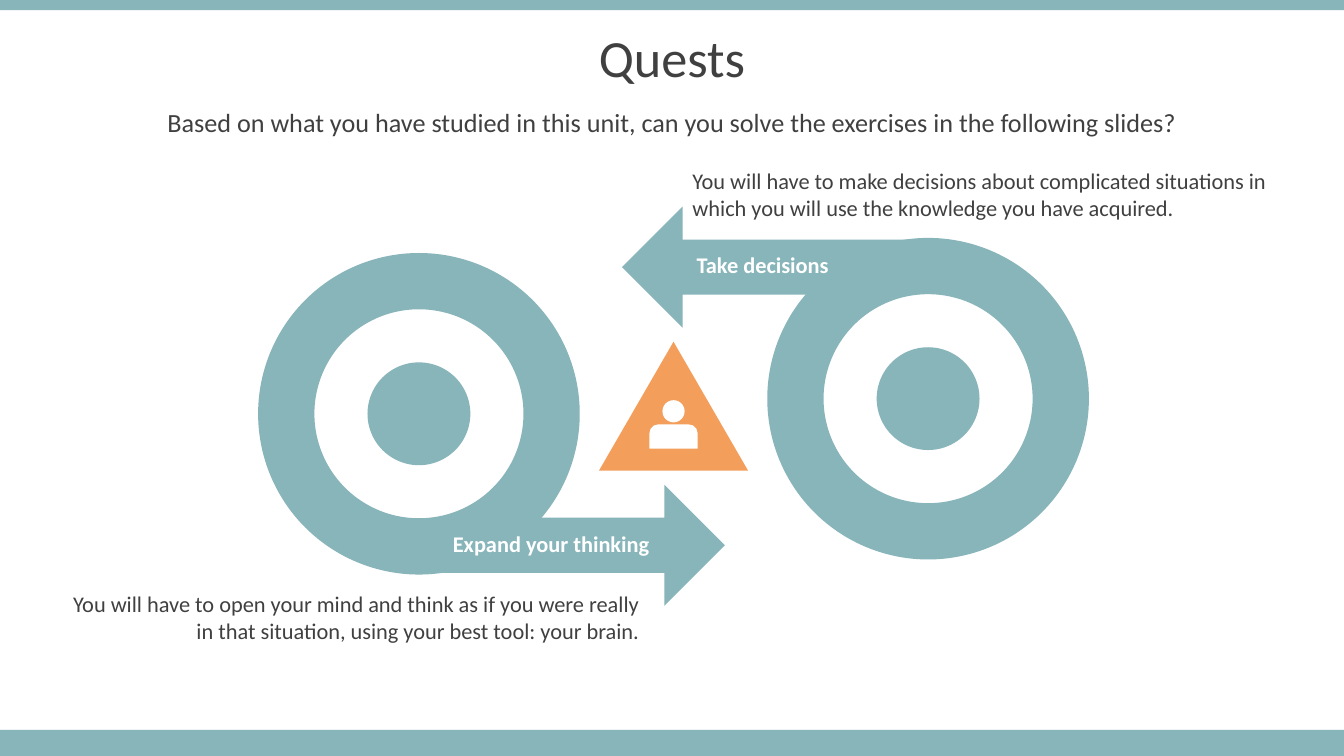
from pptx import Presentation
from pptx.dml.color import RGBColor
from pptx.enum.shapes import MSO_SHAPE as Shape
from pptx.enum.text import MSO_ANCHOR as Anchor, PP_ALIGN as Align
from pptx.util import Inches, Pt

COLORS = {"teal": "87B5BA", "orange": "F39E5A", "white": "FFFFFF", "text": "404040"}
FONT = "Calibri"
SLIDE_W, SLIDE_H = 13.33, 7.5

BARS = [(7.24, 0.26), (0, 0.1)]  # top, height

# Each target: left and top of its ring, rotation of ring and arrow
TARGETS = [(2.56, 2.51, 0), (7.61, 2.36, 180)]
RING, DOT = 3.19, 1.02
ARROW_W, ARROW_H = 2.89, 1.2
ARROW_DX, ARROW_DY = 1.74, 2.3

TRIANGLE = (5.94, 3.39, 1.48, 1.28)
HEAD, BODY_W, BODY_H, BODY_TOP = 0.22, 0.48, 0.24, 4.21
HEAD_TOP = 3.97

HEADING = {"align": Align.CENTER, "anchor": Anchor.MIDDLE,
           "paragraph": {"line_spacing": 0.9, "space_before": Pt(10)}}
LABEL = {"color": "white", "bold": True}
TEXTS = [
    ("Quests", (0, 0.18, SLIDE_W, 0.84), {**HEADING, "size": 37.3}),
    ("Based on what you have studied in this unit, can you solve the exercises "
     "in the following slides?", (0, 1.02, SLIDE_W, 0.42), {**HEADING, "size": 18.7}),
    ("You will have to make decisions about complicated situations in which you "
     "will use the knowledge you have acquired.", (6.77, 1.61, 6.3, 0.64), {}),
    ("You will have to open your mind and think as if you were really in that "
     "situation, using your best tool: your brain.", (0.56, 5.81, 5.88, 0.64),
     {"align": Align.RIGHT}),
    ("Expand your thinking", (3.13, 5.21, 3.41, 0.37), {**LABEL, "align": Align.RIGHT}),
    ("Take decisions", (6.81, 2.44, 3.41, 0.37), LABEL),
]


def add_figure(slide, kind, box, color, adjustments=(), rotation=0):
    figure = slide.shapes.add_shape(kind, *map(Inches, box))
    figure.shadow.inherit = False
    figure.fill.solid()
    figure.fill.fore_color.rgb = RGBColor.from_string(COLORS[color])
    figure.line.fill.background()
    figure.rotation = rotation
    for index, value in enumerate(adjustments):
        figure.adjustments[index] = value


def add_target(slide, left, top, rotation):
    """Ring, arrow and dot; a half turn moves the arrow to the opposite corner."""
    arrow_x, arrow_y = ARROW_DX, ARROW_DY
    if rotation:
        arrow_x = RING - ARROW_DX - ARROW_W
        arrow_y = RING - ARROW_DY - ARROW_H
    inset = (RING - DOT) / 2
    add_figure(slide, Shape.DONUT, (left, top, RING, RING), "teal", [0.175], rotation)
    add_figure(slide, Shape.RIGHT_ARROW, (left + arrow_x, top + arrow_y, ARROW_W, ARROW_H),
               "teal", [0.455, 0.5], rotation)
    add_figure(slide, Shape.OVAL, (left + inset, top + inset, DOT, DOT), "teal")


def add_person_sign(slide):
    left, _, width, _ = TRIANGLE
    center = left + width / 2
    add_figure(slide, Shape.ISOSCELES_TRIANGLE, TRIANGLE, "orange")
    add_figure(slide, Shape.ROUND_2_SAME_RECTANGLE,
               (center - BODY_W / 2, BODY_TOP, BODY_W, BODY_H), "white", [0.38, 0])
    add_figure(slide, Shape.OVAL, (center - HEAD / 2, HEAD_TOP, HEAD, HEAD), "white")


def add_text(slide, text, box, style):
    frame = slide.shapes.add_textbox(*map(Inches, box)).text_frame
    frame.word_wrap = True
    frame.vertical_anchor = style.get("anchor", Anchor.TOP)
    para = frame.paragraphs[0]
    para.alignment = style.get("align", Align.LEFT)
    for name, value in style.get("paragraph", {}).items():
        setattr(para, name, value)
    span = para.add_run()
    span.text = text
    font_values = {"name": FONT, "size": Pt(style.get("size", 16)),
                   "bold": style.get("bold", False)}
    for name, value in font_values.items():
        setattr(span.font, name, value)
    span.font.color.rgb = RGBColor.from_string(COLORS[style.get("color", "text")])


def main():
    deck = Presentation()
    deck.slide_width, deck.slide_height = Inches(SLIDE_W), Inches(SLIDE_H)
    page = deck.slides.add_slide(deck.slide_layouts[6])
    for top, height in BARS:
        add_figure(page, Shape.RECTANGLE, (0, top, SLIDE_W, height), "teal")
    for target in TARGETS:
        add_target(page, *target)
    add_person_sign(page)
    for text, box, style in TEXTS:
        add_text(page, text, box, style)
    deck.save("out.pptx")


if __name__ == "__main__":
    main()
